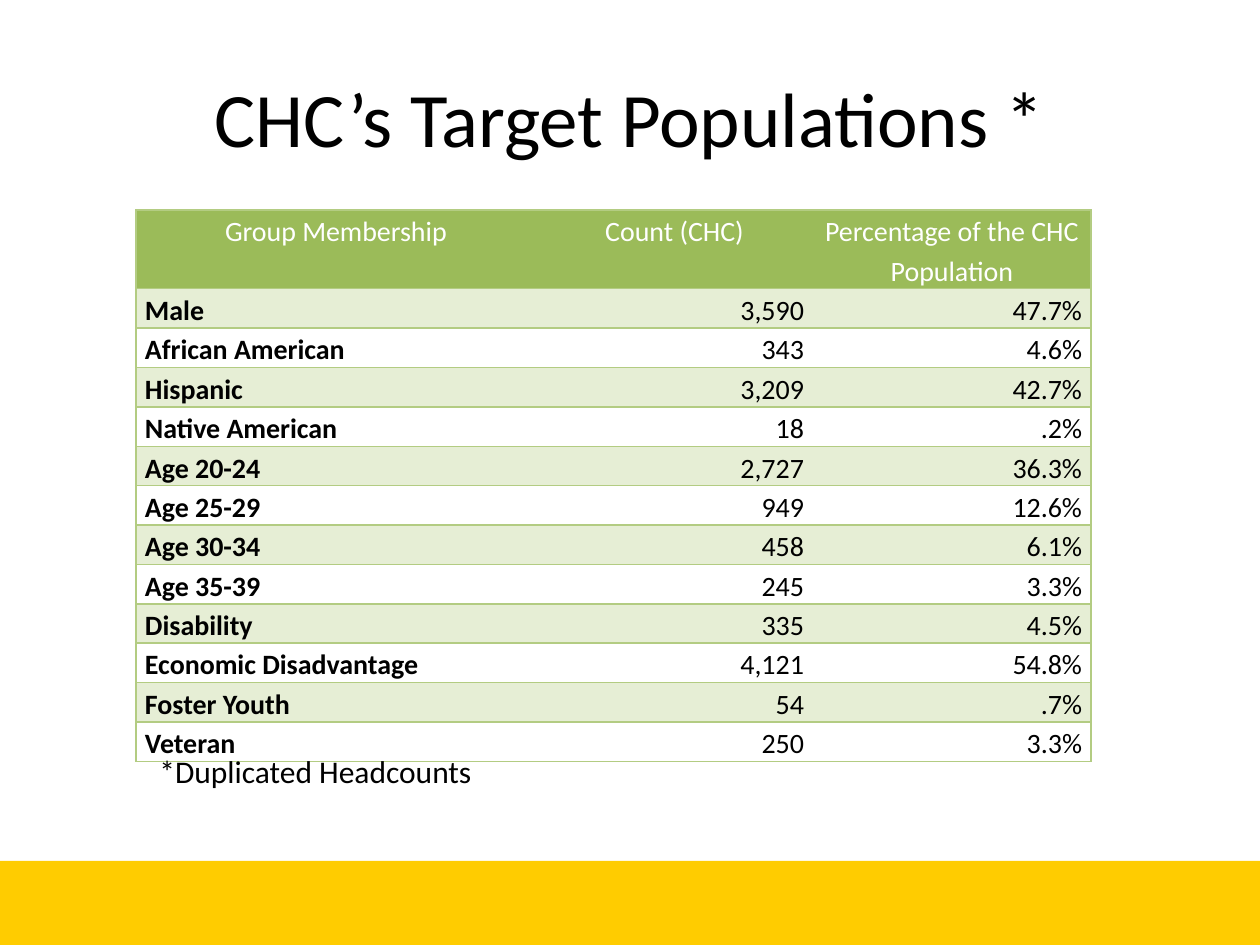
from lxml.etree import SubElement
from pptx import Presentation
from pptx.dml.color import RGBColor
from pptx.enum.shapes import MSO_SHAPE as Shape
from pptx.enum.text import MSO_ANCHOR as Anchor, PP_ALIGN as Align
from pptx.oxml.ns import qn
from pptx.util import Emu, Pt

PX = 914400 // 126
FONT = "Calibri"
BLACK = RGBColor(0x00, 0x00, 0x00)
WHITE = RGBColor(0xFF, 0xFF, 0xFF)
GOLD = RGBColor(0xFF, 0xCC, 0x00)
GREEN = RGBColor(0x9B, 0xBB, 0x59)
PALE_GREEN = RGBColor(0xE6, 0xEE, 0xD5)
BORDER = RGBColor(0xB3, 0xCC, 0x82)

HEADINGS = ("Group Membership", "Count (CHC)", "Percentage of the CHC Population")
GROUPS = (
    ("Male", "3,590", "47.7%"),
    ("African American", "343", "4.6%"),
    ("Hispanic", "3,209", "42.7%"),
    ("Native American", "18", ".2%"),
    ("Age 20-24", "2,727", "36.3%"),
    ("Age 25-29", "949", "12.6%"),
    ("Age 30-34", "458", "6.1%"),
    ("Age 35-39", "245", "3.3%"),
    ("Disability", "335", "4.5%"),
    ("Economic Disadvantage", "4,121", "54.8%"),
    ("Foster Youth", "54", ".7%"),
    ("Veteran", "250", "3.3%"),
)
COLUMN_WIDTHS = (400, 277, 278)
HEADER_HEIGHT, ROW_HEIGHT = 73, 36


def px(*lengths):
    return [Emu(length * PX) for length in lengths]


def write(para, text, size, color=BLACK, bold=False, align=Align.LEFT):
    para.text = text
    para.alignment = align
    font = para.font
    font.name, font.size, font.bold = FONT, Pt(size), bold
    font.color.rgb = color


def add_band(page):
    band = page.shapes.add_shape(Shape.ROUNDED_RECTANGLE, *px(-10, 861, 1292, 84))
    band.adjustments[0] = 0.1
    band.shadow.inherit = False
    band.fill.solid()
    band.fill.fore_color.rgb = GOLD
    band.line.fill.background()


def place_title(page, text):
    title = page.shapes.title
    title.left, title.top, title.width, title.height = px(63, 38, 1134, 158)
    title.text_frame.vertical_anchor = Anchor.MIDDLE
    write(title.text_frame.paragraphs[0], text, 44, align=Align.CENTER)
    title.element.getparent().append(title.element)


def set_borders(cell, drawn_sides):
    properties = cell._tc.get_or_add_tcPr()
    for side in "LRTB":
        line = SubElement(properties, qn(f"a:ln{side}"), w=str(Pt(1)))
        if side in drawn_sides:
            fill = SubElement(line, qn("a:solidFill"))
            SubElement(fill, qn("a:srgbClr"), val=str(BORDER))
        else:
            SubElement(line, qn("a:noFill"))


def fill_cell(cell, text, row, column):
    set_borders(cell, "TB" + ("L", "", "R")[column])
    cell.margin_left, cell.margin_right, cell.margin_top, cell.margin_bottom = px(9, 9, 0, 0)
    if row % 2 or row == 0:
        cell.fill.solid()
        cell.fill.fore_color.rgb = PALE_GREEN if row else GREEN
    else:
        cell.fill.background()
    para = cell.text_frame.paragraphs[0]
    para.line_spacing = 1.15
    if row == 0:
        write(para, text, 16, WHITE, align=Align.CENTER)
    elif column == 0:
        write(para, text, 16, bold=True)
    else:
        write(para, text, 16, align=Align.RIGHT)


def add_population_table(page):
    rows = (HEADINGS, *GROUPS)
    height = HEADER_HEIGHT + ROW_HEIGHT * len(GROUPS)
    frame = page.shapes.add_table(
        len(rows), len(HEADINGS), *px(136, 210, sum(COLUMN_WIDTHS), height))
    table = frame.table
    for column, width in zip(table.columns, px(*COLUMN_WIDTHS)):
        column.width = width
    for row, texts in enumerate(rows):
        table.rows[row].height = px(ROW_HEIGHT if row else HEADER_HEIGHT)[0]
        for column, text in enumerate(texts):
            fill_cell(table.cell(row, column), text, row, column)


def add_footnote(page, text):
    box = page.shapes.add_textbox(*px(147, 746, 557, 50))
    box.text_frame.word_wrap = True
    write(box.text_frame.paragraphs[0], text, 18)


def main():
    deck = Presentation()
    deck.slide_width, deck.slide_height = px(1260, 945)
    page = deck.slides.add_slide(deck.slide_layouts[5])
    add_band(page)
    place_title(page, "CHC’s Target Populations *")
    add_population_table(page)
    add_footnote(page, "*Duplicated Headcounts")
    deck.save("out.pptx")


if __name__ == "__main__":
    main()
